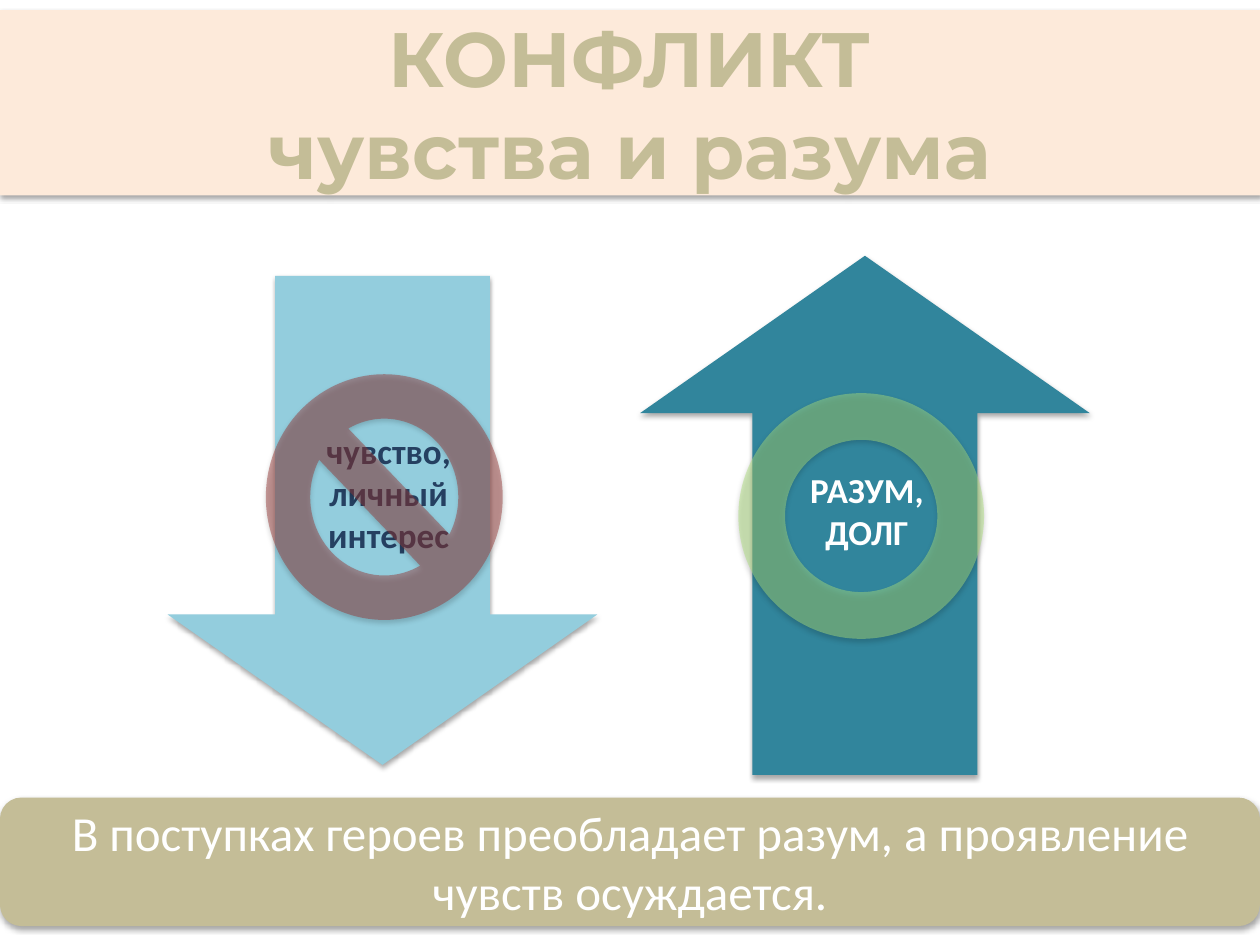
from lxml import etree
from pptx import Presentation
from pptx.dml.color import RGBColor
from pptx.enum.shapes import MSO_SHAPE
from pptx.enum.text import MSO_ANCHOR, MSO_AUTO_SIZE, PP_ALIGN
from pptx.oxml.ns import qn
from pptx.util import Inches, Pt

ARROW, BANNER = MSO_SHAPE.UP_ARROW, MSO_SHAPE.ROUNDED_RECTANGLE
BAN, RING = MSO_SHAPE.NO_SYMBOL, MSO_SHAPE.DONUT
CENTER, MIDDLE, TOP = PP_ALIGN.CENTER, MSO_ANCHOR.MIDDLE, MSO_ANCHOR.TOP
NO_FIT, GROW = MSO_AUTO_SIZE.NONE, MSO_AUTO_SIZE.SHAPE_TO_FIT_TEXT
COLORS = {
    "peach": "FDEADA", "sand": "C4BD97", "sky": "93CDDD", "teal": "31859C",
    "navy": "254061", "white": "FFFFFF", "red": "953735", "green": "ABDD79",
}


def color(name):
    """Return the named colour."""
    return RGBColor.from_string(COLORS[name])


def add_alpha(color_element, percent):
    """Give a colour element its opacity."""
    etree.SubElement(color_element, qn("a:alpha"), val=str(percent * 1000))


def add_shadow(shape):
    """Add the soft shadow that falls straight down."""
    shape.shadow.inherit = False
    effects = shape._element.spPr.find(qn("a:effectLst"))
    shadow = etree.SubElement(
        effects, qn("a:outerShdw"), blurRad=str(Pt(3.1)), dist=str(Pt(1.8)),
        dir="5400000", rotWithShape="0")
    add_alpha(etree.SubElement(shadow, qn("a:srgbClr"), val="000000"), 35)


def paint(shape, fill, opacity=100):
    """Fill a shape without outline and give it the shadow."""
    shape.fill.solid()
    shape.fill.fore_color.rgb = color(fill)
    if opacity < 100:
        add_alpha(shape._element.spPr.find(qn("a:solidFill"))[0], opacity)
    shape.line.fill.background()
    add_shadow(shape)


def add_figure(shapes, kind, place, fill, adjustments=(), opacity=100):
    """Add a painted preset shape."""
    figure = shapes.add_shape(kind, *map(Inches, place))
    for index, value in enumerate(adjustments):
        figure.adjustments[index] = value
    paint(figure, fill, opacity)
    return figure


def style(span, size, ink, bold=False, face="Calibri"):
    """Set the font of a run."""
    span.font.size, span.font.bold, span.font.name = Pt(size), bold, face
    span.font.color.rgb = color(ink)


def write(shape, lines, size, ink, bold=False, anchor=MIDDLE, fit=NO_FIT):
    """Write centred paragraphs into a shape."""
    frame = shape.text_frame
    frame.word_wrap, frame.auto_size, frame.vertical_anchor = True, fit, anchor
    for index, line in enumerate(lines):
        para = frame.add_paragraph() if index else frame.paragraphs[0]
        para.alignment = CENTER
        span = para.add_run()
        span.text = line
        style(span, size, ink, bold)


def add_label(page, place, lines, ink):
    """Add a bold label in a text box."""
    box = page.shapes.add_textbox(*map(Inches, place))
    write(box, lines, 20, ink, True, TOP, GROW)


def set_title(page, lines):
    """Turn the title placeholder into the top band."""
    title = page.shapes.title
    title.left, title.top, title.width, title.height = map(
        Inches, (0, 0.08, 10, 1.47))
    paint(title, "peach")
    frame = title.text_frame
    frame.auto_size, frame.vertical_anchor = NO_FIT, MIDDLE
    para = frame.paragraphs[0]
    para.alignment = CENTER
    for index, line in enumerate(lines):
        if index:
            para.add_line_break()
        span = para.add_run()
        span.text = line
        style(span, 44, "sand", True, "Montserrat")


def main():
    """Build the slide."""
    deck = Presentation()
    deck.slide_width, deck.slide_height = Inches(10), Inches(7.5)
    page = deck.slides.add_slide(deck.slide_layouts[5])
    set_title(page, ["КОНФЛИКТ", "чувства и разума"])

    arrows = page.shapes.add_group_shape().shapes
    down = add_figure(arrows, ARROW, (1.33, 2.19, 3.41, 3.88), "sky", (0.5, 0.35))
    down.rotation = 180
    add_figure(arrows, ARROW, (5.08, 2.03, 3.57, 4.12), "teal", (0.5, 0.35))

    banner = add_figure(page.shapes, BANNER, (0, 6.33, 10, 1.02), "sand")
    write(banner, ["В поступках героев преобладает разум, "
                   "а проявление чувств осуждается."], 28, "white")

    add_label(page, (2.42, 3.36, 1.33, 1.11), ["чувство,", "личный интерес"], "navy")
    add_figure(page.shapes, BAN, (2.11, 2.97, 1.88, 1.95), "red", opacity=47)
    add_label(page, (6.02, 3.67, 1.72, 0.77), ["РАЗУМ,", "ДОЛГ"], "white")
    add_figure(page.shapes, RING, (5.86, 3.12, 1.95, 1.95), "green", (0.19,), 46)
    deck.save("out.pptx")


if __name__ == "__main__":
    main()
